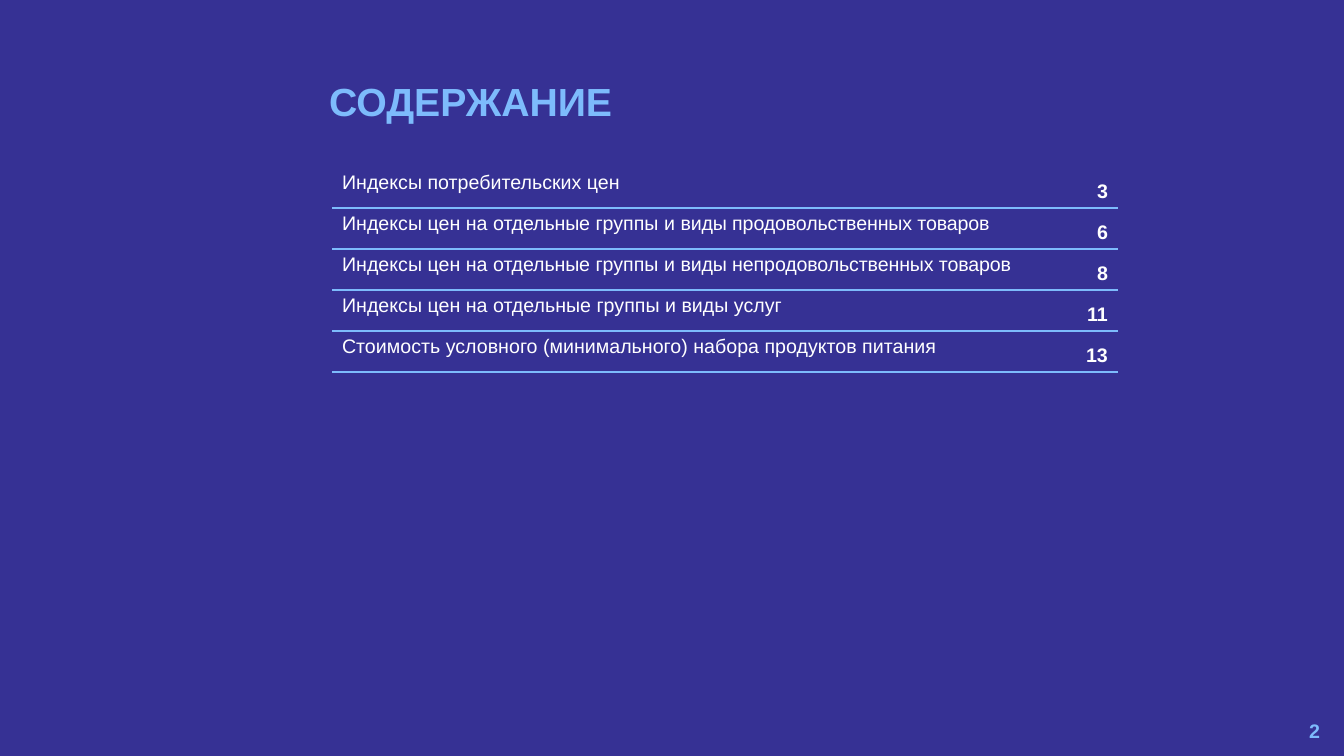
from lxml import etree
from pptx import Presentation
from pptx.dml.color import RGBColor
from pptx.enum.text import MSO_ANCHOR, MSO_AUTO_SIZE, PP_ALIGN
from pptx.oxml.ns import qn
from pptx.util import Emu, Pt

TOP, MIDDLE, BOTTOM = MSO_ANCHOR.TOP, MSO_ANCHOR.MIDDLE, MSO_ANCHOR.BOTTOM
LEFT, RIGHT = PP_ALIGN.LEFT, PP_ALIGN.RIGHT
NO_AUTOFIT = MSO_AUTO_SIZE.NONE
EMU_PER_PX = 914400 / 100.8
TITLE_ONLY = 5
PLAIN_TABLE = "{2D5ABB26-0587-4C30-8999-92F81FD0307C}"
COLORS = {"back": "363194", "accent": "7DBBFC", "text": "FFFFFF"}
TIGHT = -0.1


def goods_entry(goods):
    return [("Индексы цен на ", 0), ("отдельные ", TIGHT),
            ("группы и ", 0), (goods, TIGHT)]


CONTENTS = [
    ([("Индексы потребительских цен", 0)], "3"),
    (goods_entry("виды продовольственных товаров"), "6"),
    (goods_entry("виды непродовольственных товаров"), "8"),
    ([("Индексы цен на отдельные группы и виды услуг", 0)], "11"),
    ([("Стоимость условного (минимального) набора продуктов питания", 0)], "13"),
]


def px(value):
    return Emu(round(value * EMU_PER_PX))


class ContentsPage:
    """Holds the style and the current slide, and draws its elements."""

    def __init__(self, deck):
        self.font = "Arial"
        self.page = deck.slides.add_slide(deck.slide_layouts[TITLE_ONLY])
        fill = self.page.background.fill
        fill.solid()
        fill.fore_color.rgb = RGBColor.from_string(COLORS["back"])

    def add_text(self, para, runs, size, color, bold=False, align=LEFT):
        para.alignment = align
        for text, spacing in runs:
            span = para.add_run()
            span.text = text
            span.font.name = self.font
            span.font.size = Pt(size)
            span.font.bold = bold
            span.font.color.rgb = RGBColor.from_string(COLORS[color])
            if spacing:
                span.font._element.set("spc", str(round(spacing * 100)))

    def title(self, text, left, top, width, height):
        box = self.page.shapes.title
        box.left, box.top, box.width, box.height = map(px, (left, top, width, height))
        frame = box.text_frame
        frame.word_wrap = True
        frame.auto_size = NO_AUTOFIT
        frame.vertical_anchor = TOP
        para = frame.paragraphs[0]
        para.line_spacing = 0.9
        self.add_text(para, [(text, 0)], 28, "accent", bold=True)

    def page_number(self, text, left, top, width, height):
        box = self.page.shapes.add_textbox(*map(px, (left, top, width, height)))
        frame = box.text_frame
        frame.word_wrap = True
        frame.vertical_anchor = MIDDLE
        self.add_text(frame.paragraphs[0], [(text, 0)], 14, "accent", bold=True, align=RIGHT)

    def rule_below(self, cell):
        line = etree.SubElement(cell._tc.get_or_add_tcPr(), qn("a:lnB"), w=str(Pt(1)))
        fill = etree.SubElement(line, qn("a:solidFill"))
        etree.SubElement(fill, qn("a:srgbClr"), val=COLORS["accent"])

    def contents(self, entries, left, top, widths, row_height):
        area = (left, top, sum(widths), row_height * len(entries))
        frame = self.page.shapes.add_table(len(entries), len(widths), *map(px, area))
        table = frame.table
        table.first_row = table.horz_banding = False
        table._tbl.tblPr.find(qn("a:tableStyleId")).text = PLAIN_TABLE
        for column, width in zip(table.columns, widths):
            column.width = px(width)
        for row, (runs, number) in zip(table.rows, entries):
            row.height = px(row_height)
            name_cell, number_cell = row.cells
            for cell in (name_cell, number_cell):
                self.rule_below(cell)
                cell.fill.background()
            number_cell.vertical_anchor = BOTTOM
            self.add_text(name_cell.text_frame.paragraphs[0], runs, 14, "text")
            self.add_text(number_cell.text_frame.paragraphs[0], [(number, 0)], 14, "text",
                          bold=True, align=RIGHT)


def main():
    deck = Presentation()
    deck.slide_width, deck.slide_height = px(1344), px(756)
    page = ContentsPage(deck)
    page.title("СОДЕРЖАНИЕ", 319, 78, 354, 66)
    page.page_number("2", 1028, 711, 302, 40)
    page.contents(CONTENTS, 332, 167, (717, 69), 41)
    deck.save("out.pptx")


if __name__ == "__main__":
    main()
